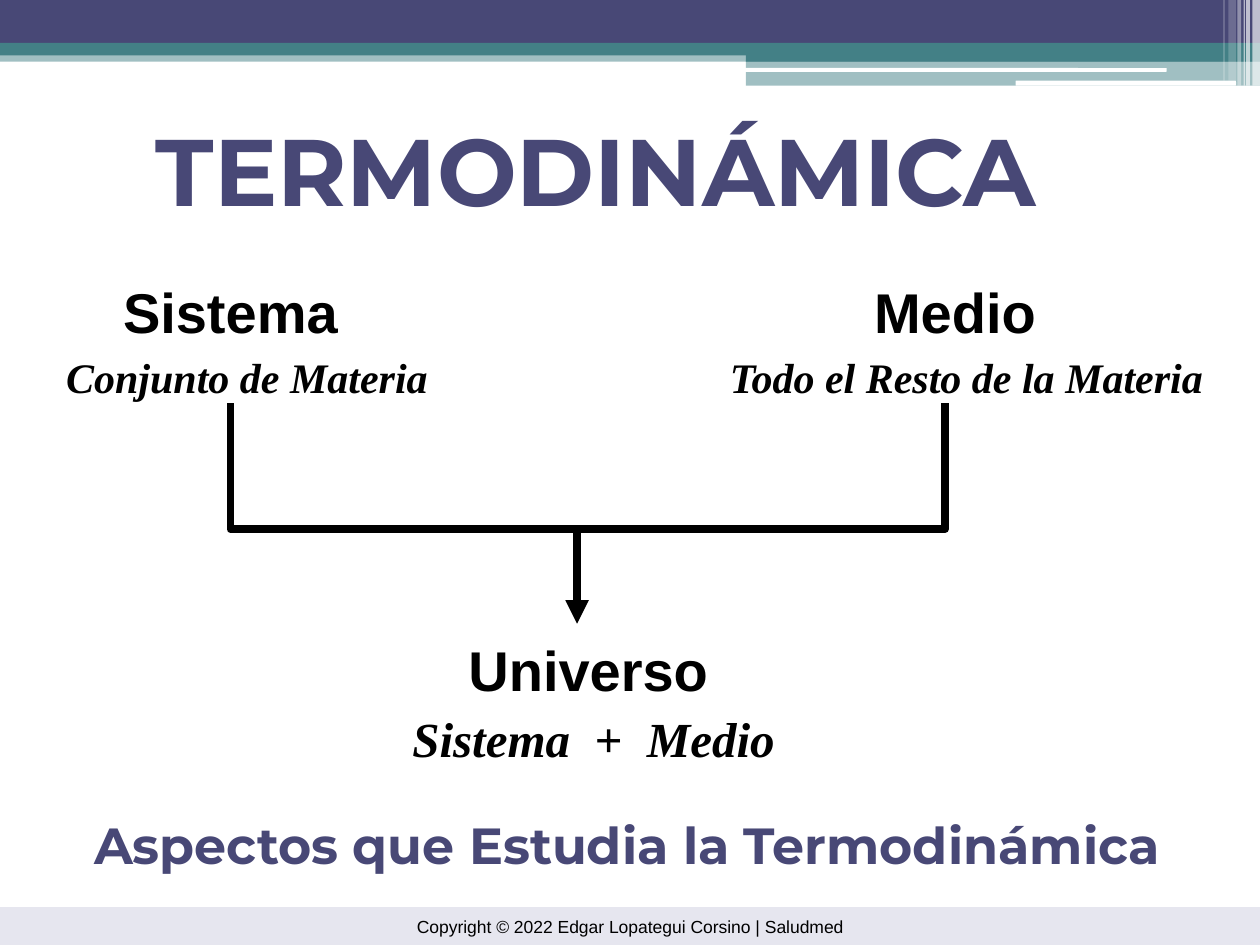
from lxml.etree import SubElement
from pptx import Presentation
from pptx.dml.color import RGBColor
from pptx.enum.shapes import MSO_CONNECTOR, MSO_SHAPE
from pptx.enum.text import MSO_ANCHOR, PP_ALIGN
from pptx.oxml.ns import qn
from pptx.util import Inches, Pt

INDIGO = RGBColor(0x48, 0x48, 0x76)
TEAL = RGBColor(0x43, 0x80, 0x86)
PALE = RGBColor(0xE6, 0xE6, 0xEF)
WHITE = RGBColor(0xFF, 0xFF, 0xFF)
BLACK = RGBColor(0, 0, 0)

RECT, ROUND = MSO_SHAPE.RECTANGLE, MSO_SHAPE.ROUNDED_RECTANGLE
BANDS = [
    (RECT, 0, 0.4, 10, 0.09, TEAL, 50),
    (RECT, 0, 0, 10, 0.34, INDIGO, 100),
    (RECT, 0, 0.34, 10, 0.1, TEAL, 100),
    (RECT, 5.92, 0.39, 4.08, 0.1, TEAL, 100),
    (RECT, 5.92, 0.48, 4.08, 0.2, TEAL, 50),
    (ROUND, 5.91, 0.54, 3.35, 0.03, WHITE, 100),
    (ROUND, 8.06, 0.64, 1.75, 0.04, WHITE, 100),
]
STRIPES = [
    (9.94, 0.06, 0.68, 65),
    (9.89, 0.03, 0.68, 65),
    (9.87, 0.01, 0.68, 60),
    (9.82, 0.03, 0.68, 40),
    (9.75, 0.06, 0.64, 20),
    (9.71, 0.01, 0.64, 30),
]

FOOTER = "Copyright © 2022 Edgar Lopategui Corsino | Saludmed"
FOOTER_FONT = {"name": "Arial", "size": Pt(10)}
TITLE = {"name": "Montserrat", "size": Pt(54), "bold": True}
CAPTION = {"name": "Montserrat", "size": Pt(29), "bold": True}
HEADING = {"name": "Arial", "size": Pt(32), "bold": True}
DETAIL = {"name": "Times New Roman", "size": Pt(24), "bold": True, "italic": True}
SUM = {**DETAIL, "size": Pt(28)}

TOP, MIDDLE = MSO_ANCHOR.TOP, MSO_ANCHOR.MIDDLE
LABEL = {"margin_left": Inches(0.05), "margin_top": Inches(0.09), "vertical_anchor": TOP}
CAPTION_FRAME = {**LABEL, "margin_left": Inches(0.15), "margin_top": Inches(0.07)}
TITLE_FRAME = {**LABEL, "margin_top": Inches(0.12), "vertical_anchor": MIDDLE}
TEXTS = [
    ("Aspectos que Estudia la Termodinámica", 0.32, 6.39, 9.22, 0.67, CAPTION, INDIGO, CAPTION_FRAME),
    ("Sistema", 0.58, 2.11, 2.5, 0.58, HEADING, BLACK, LABEL),
    ("Medio", 6.33, 2.11, 2.5, 0.58, HEADING, BLACK, LABEL),
    ("Conjunto de Materia", 0.42, 2.7, 3.08, 0.58, DETAIL, BLACK, LABEL),
    ("Todo el Resto de la Materia", 5.67, 2.7, 4, 0.58, DETAIL, BLACK, LABEL),
    ("Universo", 3.42, 4.95, 2.5, 0.58, HEADING, BLACK, LABEL),
    ("Sistema  +  Medio", 3.17, 5.53, 3.08, 0.58, SUM, BLACK, LABEL),
    ("TERMODINÁMICA", 0.48, 0.68, 8.5, 1.25, TITLE, INDIGO, TITLE_FRAME),
]
BRACKET = [(1.83, 3.2), (1.83, 4.2), (7.5, 4.2), (7.5, 3.2)]
ARROW = (4.58, 4.2, 4.58, 4.95)
LINE_WIDTH = Pt(4.5)


def set_attrs(obj, values):
    for key, value in values.items():
        setattr(obj, key, value)


def add_band(s, kind, x, y, w, h, color, alpha=100):
    sp = s.shapes.add_shape(kind, Inches(x), Inches(y), Inches(w), Inches(h))
    sp.shadow.inherit = False
    sp.line.fill.background()
    sp.fill.solid()
    sp.fill.fore_color.rgb = color
    if alpha < 100:
        clr = sp.fill._xPr.find(qn("a:solidFill"))[0]
        SubElement(clr, qn("a:alpha"), val=str(alpha * 1000))
    return sp


def write(sp, text, font, color, frame):
    tf = sp.text_frame
    tf.word_wrap = True
    set_attrs(tf, {"margin_right": Inches(0.05), "margin_bottom": Inches(0.05), **frame})
    p = tf.paragraphs[0]
    p.alignment = PP_ALIGN.CENTER
    r = p.add_run()
    r.text = text
    set_attrs(r.font, font)
    r.font.color.rgb = color


def style_line(sp):
    sp.line.color.rgb = BLACK
    sp.line.width = LINE_WIDTH


prs = Presentation()
prs.slide_width, prs.slide_height = Inches(10), Inches(7.5)
s = prs.slides.add_slide(prs.slide_layouts[6])

for band in BANDS:
    add_band(s, *band)
for x, w, h, alpha in STRIPES:
    add_band(s, RECT, x, 0, w, h, WHITE, alpha)

footer = add_band(s, RECT, 0, 7.2, 10, 0.3, PALE)
write(footer, FOOTER, FOOTER_FONT, BLACK,
      {"margin_left": Inches(0.05), "margin_top": Inches(0.05), "vertical_anchor": MIDDLE})

for text, x, y, w, h, font, color, frame in TEXTS:
    box = s.shapes.add_textbox(Inches(x), Inches(y), Inches(w), Inches(h))
    write(box, text, font, color, frame)

points = [(Inches(x), Inches(y)) for x, y in BRACKET]
builder = s.shapes.build_freeform(*points[0])
builder.add_line_segments(points[1:], close=False)
bracket = builder.convert_to_shape()
bracket.shadow.inherit = False
bracket.fill.background()
style_line(bracket)

arrow = s.shapes.add_connector(MSO_CONNECTOR.STRAIGHT, *map(Inches, ARROW))
style_line(arrow)
SubElement(arrow.line._get_or_add_ln(), qn("a:tailEnd"), type="triangle")
SubElement(arrow._element.spPr, qn("a:effectLst"))

prs.save("out.pptx")
